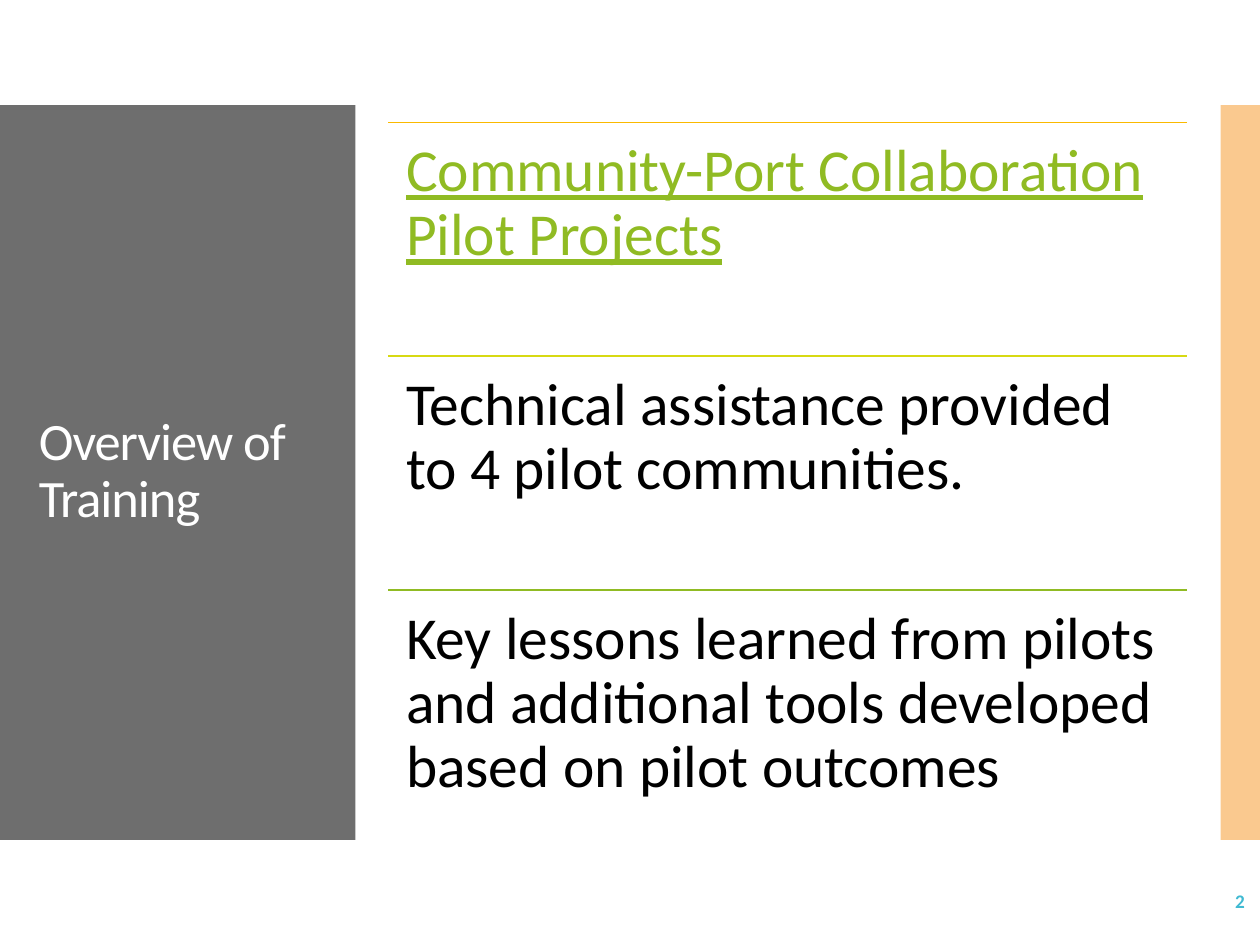
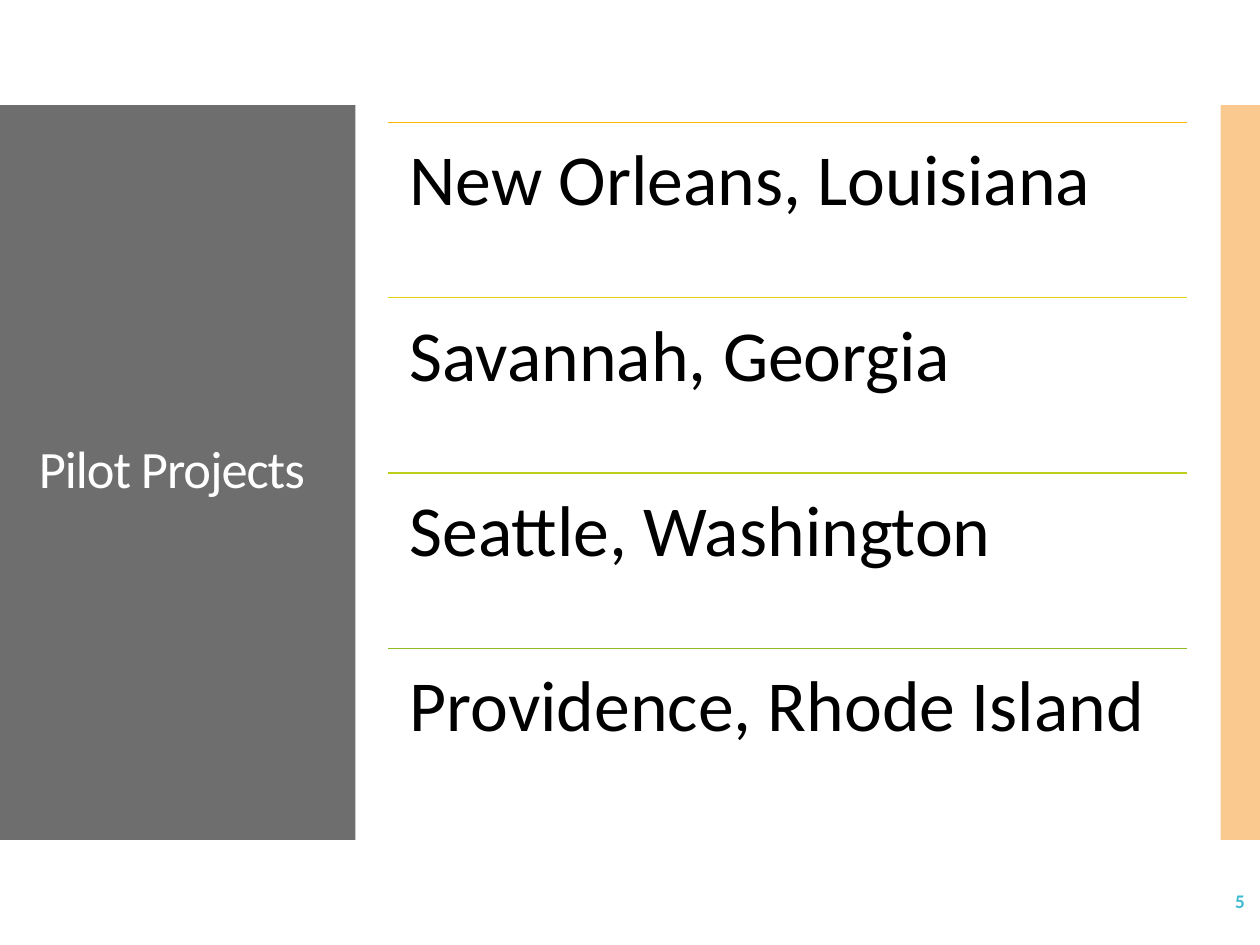
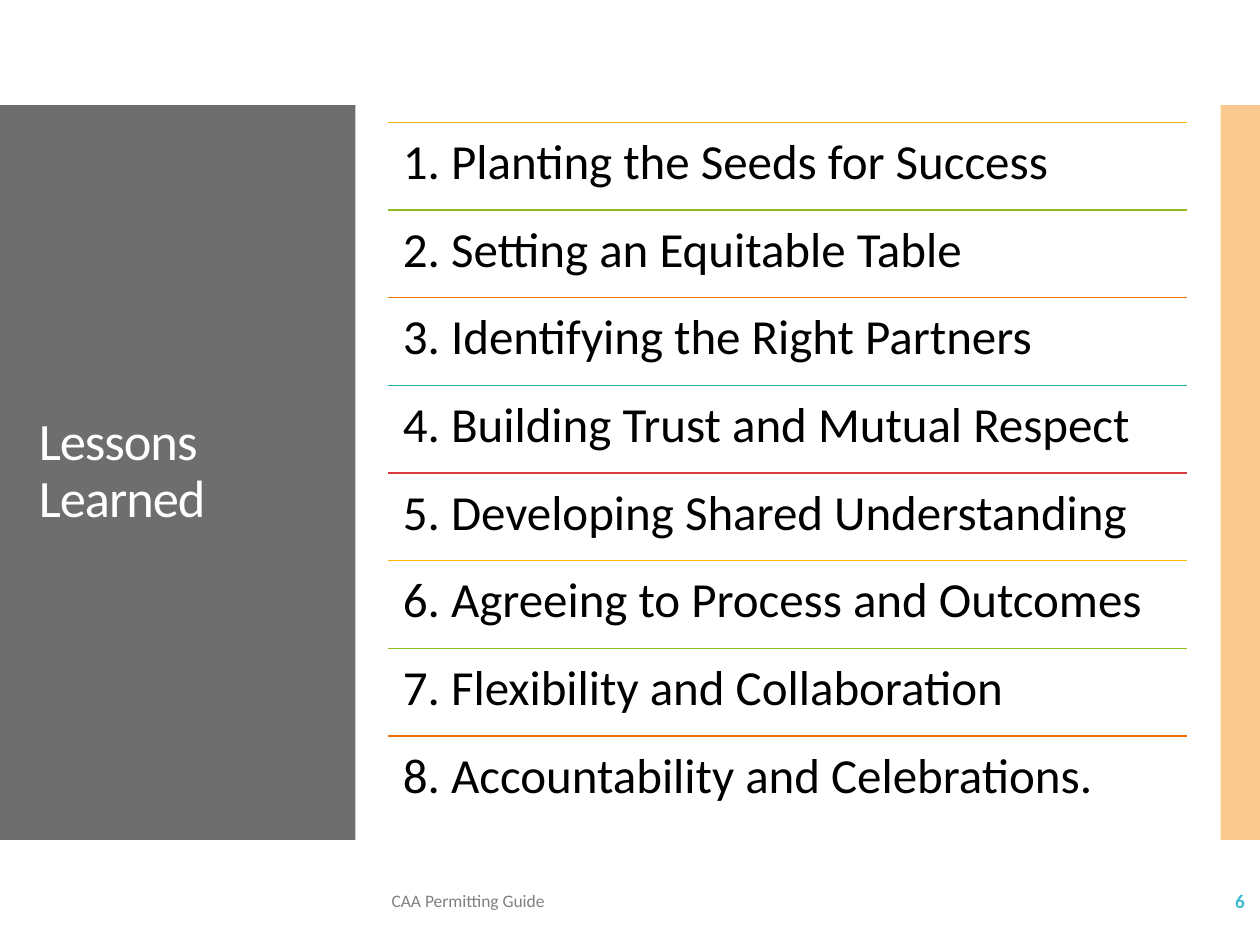
from pptx import Presentation
from pptx.dml.color import RGBColor
from pptx.enum.shapes import MSO_CONNECTOR, MSO_SHAPE
from pptx.enum.text import MSO_ANCHOR, PP_ALIGN
from pptx.oxml.ns import qn
from pptx.util import Pt
from lxml.etree import SubElement

# Colours and font
FONT = "Calibri"
WHITE = RGBColor(0xFF, 0xFF, 0xFF)
BLACK = RGBColor(0x00, 0x00, 0x00)
GREY = RGBColor(0x6E, 0x6E, 0x6E)
FOOTER_GREY = RGBColor(0x80, 0x80, 0x80)
BLUE = RGBColor(0x40, 0xBA, 0xD2)
BAND_ORANGE = RGBColor(0xF7, 0x94, 0x21)
GOLD = RGBColor(0xFA, 0xB9, 0x00)
YELLOW = RGBColor(0xE4, 0xD3, 0x0D)
YELLOW_GREEN = RGBColor(0xD7, 0xD9, 0x13)
LIME = RGBColor(0xBC, 0xCF, 0x18)
GREEN = RGBColor(0x90, 0xBB, 0x23)
ORANGE = RGBColor(0xEE, 0x70, 0x08)
TEAL = RGBColor(0x1A, 0xB3, 0x9F)
RED = RGBColor(0xD5, 0x39, 0x3D)

# List area, in points
LIST_LEFT, LIST_TOP, LIST_WIDTH, LIST_HEIGHT = 221.8, 69.9, 456.4, 400.8

# Title, page number, footer, text size, inset, rule colours, rows
SLIDES = [
    ("Overview of Training", "2", None, 34, 10.2,
     [GOLD, YELLOW_GREEN, GREEN],
     ["Community-Port Collaboration Pilot Projects",
      "Technical assistance provided to 4 pilot communities.",
      "Key lessons learned from pilots and additional tools developed "
      "based on pilot outcomes"]),
    ("Pilot Projects", "5", None, 41, 12.3,
     [GOLD, YELLOW, LIME, GREEN],
     ["New Orleans, Louisiana", "Savannah, Georgia",
      "Seattle, Washington", "Providence, Rhode Island"]),
    ("Lessons Learned", "6", "CAA Permitting Guide", 28, 8.4,
     [GOLD, GREEN, ORANGE, TEAL, RED],
     ["1. Planting the Seeds for Success",
      "2. Setting an Equitable Table",
      "3. Identifying the Right Partners",
      "4. Building Trust and Mutual Respect",
      "5. Developing Shared Understanding",
      "6. Agreeing to Process and Outcomes",
      "7. Flexibility and Collaboration",
      "8. Accountability and Celebrations."]),
]
UNDERLINED = SLIDES[0][-1][0]


def add_band(s, left, width, color):
    sp = s.shapes.add_shape(MSO_SHAPE.RECTANGLE, Pt(left), Pt(60), Pt(width), Pt(420))
    sp.shadow.inherit = False
    sp.fill.solid()
    sp.fill.fore_color.rgb = color
    sp.line.fill.background()
    return sp


def add_text(s, box, text, size, color, anchor=MSO_ANCHOR.MIDDLE, inset=(7.2, 3.6)):
    sp = s.shapes.add_textbox(*[Pt(v) for v in box])
    tf = sp.text_frame
    tf.word_wrap = True
    tf.vertical_anchor = anchor
    tf.margin_left = tf.margin_right = Pt(inset[0])
    tf.margin_top = tf.margin_bottom = Pt(inset[1])
    p = tf.paragraphs[0]
    r = p.add_run()
    r.text = text
    r.font.name = FONT
    r.font.size = Pt(size)
    r.font.color.rgb = color
    return p, r


prs = Presentation()
prs.slide_width, prs.slide_height = Pt(720), Pt(540)

for title, number, footer, size, inset, colors, rows in SLIDES:
    s = prs.slides.add_slide(prs.slide_layouts[6])

    # Title panel and half-transparent edge band
    add_band(s, 0, 203.2, GREY)
    edge = add_band(s, 697.5, 22.5, BAND_ORANGE)
    clr = edge.fill._xPr.find(qn("a:solidFill")).find(qn("a:srgbClr"))
    SubElement(clr, qn("a:alpha")).set("val", "50000")

    # Title
    p, r = add_text(s, (15.1, 88.6, 174.2, 362.2), title, 30, WHITE)
    p.line_spacing = 0.9
    r._r.get_or_add_rPr().set("spc", "-60")

    # Footer and page number
    if footer:
        add_text(s, (216.7, 500.4, 360.7, 28.8), footer, 10, FOOTER_GREY)
    p, r = add_text(s, (627.8, 500.4, 90.7, 28.8), number, 11, BLUE)
    p.alignment = PP_ALIGN.RIGHT
    r.font.bold = True

    # List rows, each under a coloured rule
    pitch = LIST_HEIGHT / len(rows)
    for i, row in enumerate(rows):
        top = LIST_TOP + i * pitch
        rule = s.shapes.add_connector(MSO_CONNECTOR.STRAIGHT, Pt(LIST_LEFT), Pt(top),
                                      Pt(LIST_LEFT + LIST_WIDTH), Pt(top))
        rule.line.color.rgb = colors[i % len(colors)]
        rule.line.width = Pt(0.85)
        SubElement(rule._element.spPr, qn("a:effectLst"))
        linked = row == UNDERLINED
        p, r = add_text(s, (LIST_LEFT, top, LIST_WIDTH, pitch), row, size,
                        GREEN if linked else BLACK, MSO_ANCHOR.TOP, (inset, inset))
        p.line_spacing = 0.9
        r.font.underline = linked

prs.save("out.pptx")
